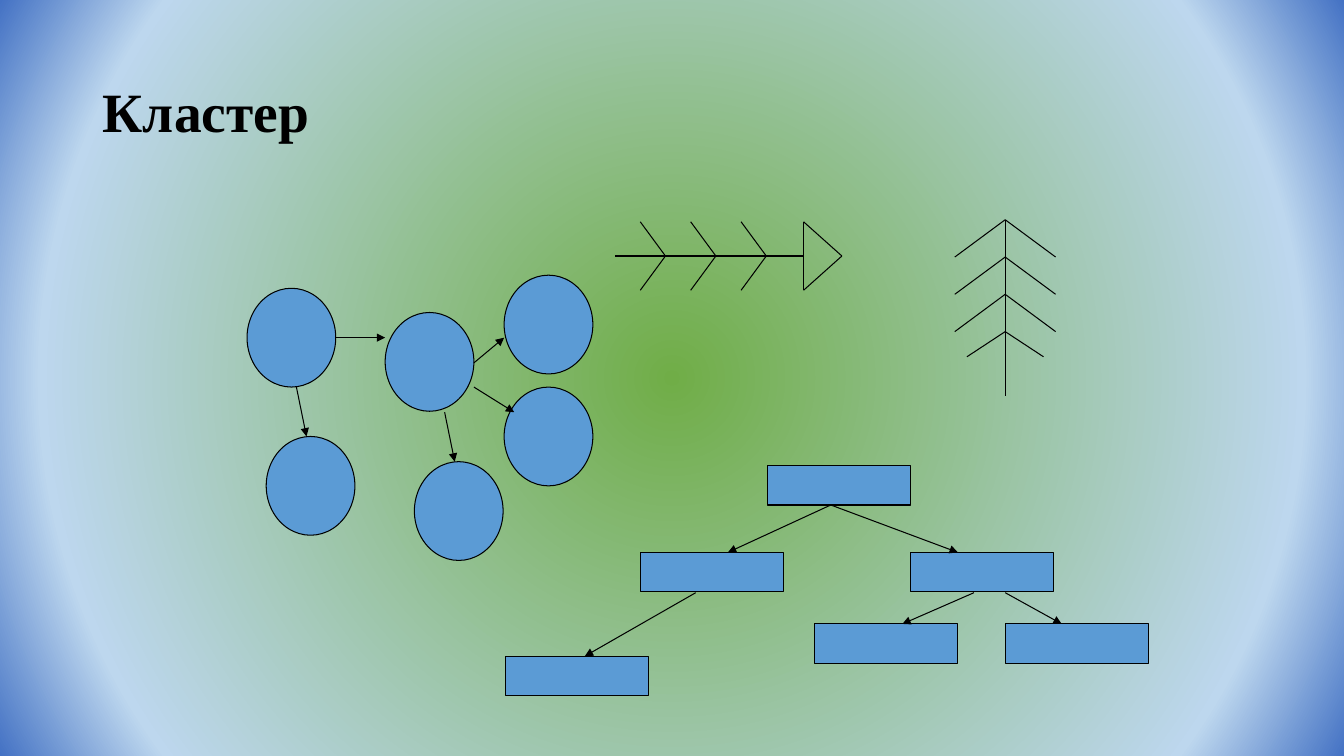
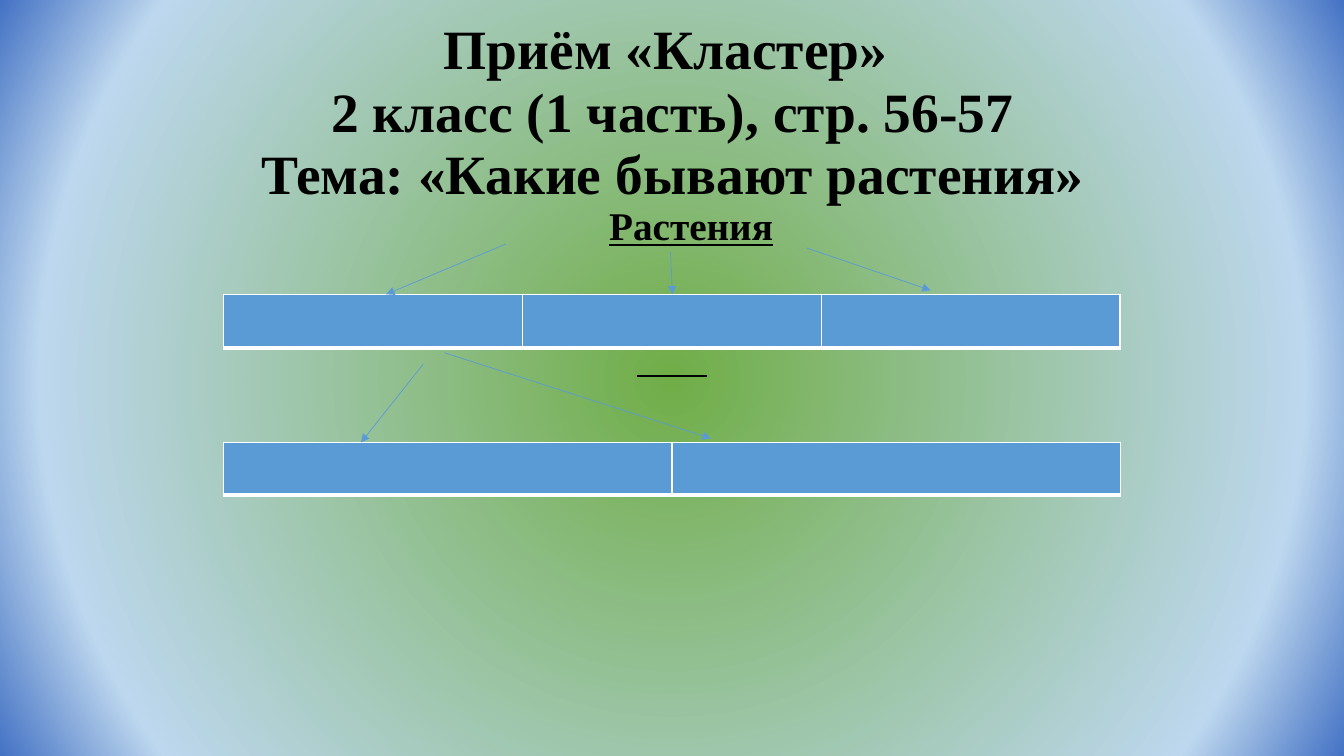
from dataclasses import dataclass
from pptx import Presentation
from pptx.dml.color import RGBColor
from pptx.enum.shapes import MSO_CONNECTOR, MSO_SHAPE
from pptx.enum.text import MSO_ANCHOR, MSO_AUTO_SIZE, PP_ALIGN
from pptx.oxml import parse_xml
from pptx.oxml.ns import nsdecls, qn
from pptx.util import Inches, Pt


@dataclass(frozen=True)
class Theme:
    """Colours, font and sizes shared by the slides."""
    ink: str = "000000"
    blue: str = "5B9BD5"
    white: str = "FFFFFF"
    glow: tuple = ((0, "70AD47"), (82, "BDD7EE"), (100, "4472C4"))
    font: str = "Times New Roman"
    title: float = 39.6
    body: float = 28
    line: float = 0.75
    thin: float = 0.5


THEME = Theme()


def rgb(code):
    """Turn a hex code into a colour."""
    return RGBColor.from_string(code)


def place(shape, left, top, width, height):
    """Move and size a shape, in inches."""
    shape.left, shape.top = Inches(left), Inches(top)
    shape.width, shape.height = Inches(width), Inches(height)


def paint(master):
    """Give the master its round gradient."""
    master.background.fill.solid()
    stops = "".join(
        f'<a:gs pos="{pos * 1000}"><a:srgbClr val="{code}"/></a:gs>'
        for pos, code in THEME.glow)
    grad = parse_xml(
        f'<a:gradFill {nsdecls("a")} rotWithShape="1"><a:gsLst>{stops}</a:gsLst>'
        '<a:path path="circle"><a:fillToRect l="50000" t="50000" r="50000" '
        'b="50000"/></a:path></a:gradFill>')
    holder = master.element.find(".//" + qn("p:bgPr"))
    holder.replace(holder[0], grad)


def write(shape, lines, size, align, space, under=False):
    """Write lines into one bold paragraph without a bullet."""
    frame = shape.text_frame
    frame.word_wrap = True
    frame.auto_size = MSO_AUTO_SIZE.NONE
    para = frame.paragraphs[0]
    props = para._p.get_or_add_pPr()
    props.set("marL", "0")
    props.set("indent", "0")
    props.append(parse_xml(f'<a:buNone {nsdecls("a")}/>'))
    para.alignment, para.line_spacing, para.space_before = align, space, Pt(0)
    for num, line in enumerate(lines):
        if num:
            para.add_line_break()
        run = para.add_run()
        run.text = line
        font = run.font
        font.name, font.size = THEME.font, Pt(size)
        font.bold, font.underline = True, under
        font.color.rgb = rgb(THEME.ink)


def head(slide, lines, align):
    """Fill the title placeholder."""
    title = slide.shapes.title
    place(title, 0.92, 0.4, 11.5, 1.45)
    title.text_frame.vertical_anchor = MSO_ANCHOR.MIDDLE
    write(title, lines, THEME.title, align, 0.94)


def shape(slide, kind, left, top, width, height):
    """Draw a blue shape with a dark outline."""
    item = slide.shapes.add_shape(
        kind, Inches(left), Inches(top), Inches(width), Inches(height))
    item.shadow.inherit = False
    item.fill.solid()
    item.fill.fore_color.rgb = rgb(THEME.blue)
    item.line.color.rgb = rgb(THEME.ink)
    item.line.width = Pt(THEME.line)


def line(slide, ends, color=THEME.ink, width=THEME.line, arrow=False):
    """Draw a line, with an arrowhead at its end if wanted."""
    item = slide.shapes.add_connector(
        MSO_CONNECTOR.STRAIGHT, *(Inches(end) for end in ends))
    item.line.color.rgb = rgb(color)
    item.line.width = Pt(width)
    if arrow:
        item.line._get_or_add_ln().append(
            parse_xml(f'<a:tailEnd {nsdecls("a")} type="triangle"/>'))
    item._element.spPr.append(parse_xml(f'<a:effectLst {nsdecls("a")}/>'))


def table(slide, top, count, height):
    """Draw a one-row table of blue cells edged in white."""
    width = 8.89
    grid = slide.shapes.add_table(
        1, count, Inches(2.22), Inches(top), Inches(width), Inches(height)).table
    for col in grid.columns:
        col.width = Inches(width / count)
    for cell in grid.iter_cells():
        props = cell._tc.get_or_add_tcPr()
        for side, size in (("L", 1), ("R", 1), ("T", 1), ("B", 3)):
            props.append(parse_xml(
                f'<a:ln{side} {nsdecls("a")} w="{Pt(size)}"><a:solidFill>'
                f'<a:srgbClr val="{THEME.white}"/></a:solidFill></a:ln{side}>'))
        cell.fill.solid()
        cell.fill.fore_color.rgb = rgb(THEME.blue)


def web(slide):
    """Draw the cluster of ovals."""
    for left, top in ((2.45, 2.86), (3.82, 3.1), (5, 2.73),
                      (2.64, 4.33), (4.11, 4.58), (5, 3.84)):
        shape(slide, MSO_SHAPE.OVAL, left, top, 0.88, 0.98)
    for ends in ((2.94, 3.84, 3.04, 4.33), (3.33, 3.35, 3.82, 3.35),
                 (4.7, 3.6, 5, 3.35), (4.7, 3.84, 5.1, 4.09),
                 (4.41, 4.09, 4.51, 4.58)):
        line(slide, ends, arrow=True)


def fish(slide):
    """Draw the fishbone."""
    mid, neck, nose, rise = 2.54, 7.97, 8.35, 0.34
    line(slide, (6.1, mid, neck, mid))
    line(slide, (neck, mid - rise, neck, mid + rise))
    for edge in (mid - rise, mid + rise):
        line(slide, (neck, edge, nose, mid))
        for num in range(3):
            left = 6.35 + 0.5 * num
            line(slide, (left, edge, left + 0.25, mid))


def fir(slide):
    """Draw the fir tree."""
    mid, top, step = 9.97, 2.18, 0.37
    line(slide, (mid, top, mid, 3.93))
    for num in range(4):
        start = top + step * num
        reach, drop = (0.5, step) if num < 3 else (0.38, 0.25)
        for side in (-reach, reach):
            line(slide, (mid, start, mid + side, start + drop))


def tree(slide):
    """Draw the tree of boxes."""
    for left, top in ((7.61, 4.62), (6.35, 5.48), (9.03, 5.48),
                      (8.08, 6.19), (9.97, 6.19), (5.01, 6.51)):
        shape(slide, MSO_SHAPE.RECTANGLE, left, top, 1.42, 0.39)
    for ends in ((8.24, 5.01, 7.22, 5.48), (8.24, 5.01, 9.5, 5.48),
                 (9.66, 5.88, 8.95, 6.19), (9.97, 5.88, 10.53, 6.19),
                 (6.9, 5.88, 5.8, 6.51)):
        line(slide, ends, arrow=True)


def forms(deck):
    """Build the slide of cluster forms."""
    slide = deck.slides.add_slide(deck.slide_layouts[5])
    head(slide, ["Кластер"], PP_ALIGN.LEFT)
    for draw in (web, fish, fir, tree):
        draw(slide)


def plants(deck):
    """Build the slide of the plant cluster."""
    slide = deck.slides.add_slide(deck.slide_layouts[1])
    head(slide, ["Приём «Кластер» ", "2 класс (1 часть), стр. 56-57",
                 "Тема: «Какие бывают растения»"], PP_ALIGN.CENTER)
    body = slide.placeholders[1]
    place(body, 0.55, 2, 12.61, 5.29)
    write(body, ["Растения"], THEME.body, PP_ALIGN.CENTER, 0.9, True)
    table(slide, 2.92, 3, 0.53)
    table(slide, 4.39, 2, 0.52)
    line(slide, (6.32, 3.73, 7.01, 3.73), width=2)
    for ends in ((5.02, 2.42, 3.83, 2.92), (6.65, 2.5, 6.67, 2.92),
                 (8, 2.46, 9.23, 2.88), (4.2, 3.61, 3.58, 4.39),
                 (4.41, 3.5, 7.05, 4.35)):
        line(slide, ends, THEME.blue, THEME.thin, True)


def main():
    """Build and save the deck."""
    deck = Presentation()
    deck.slide_width, deck.slide_height = Inches(13.33), Inches(7.5)
    paint(deck.slide_master)
    forms(deck)
    plants(deck)
    deck.save("out.pptx")


if __name__ == "__main__":
    main()
